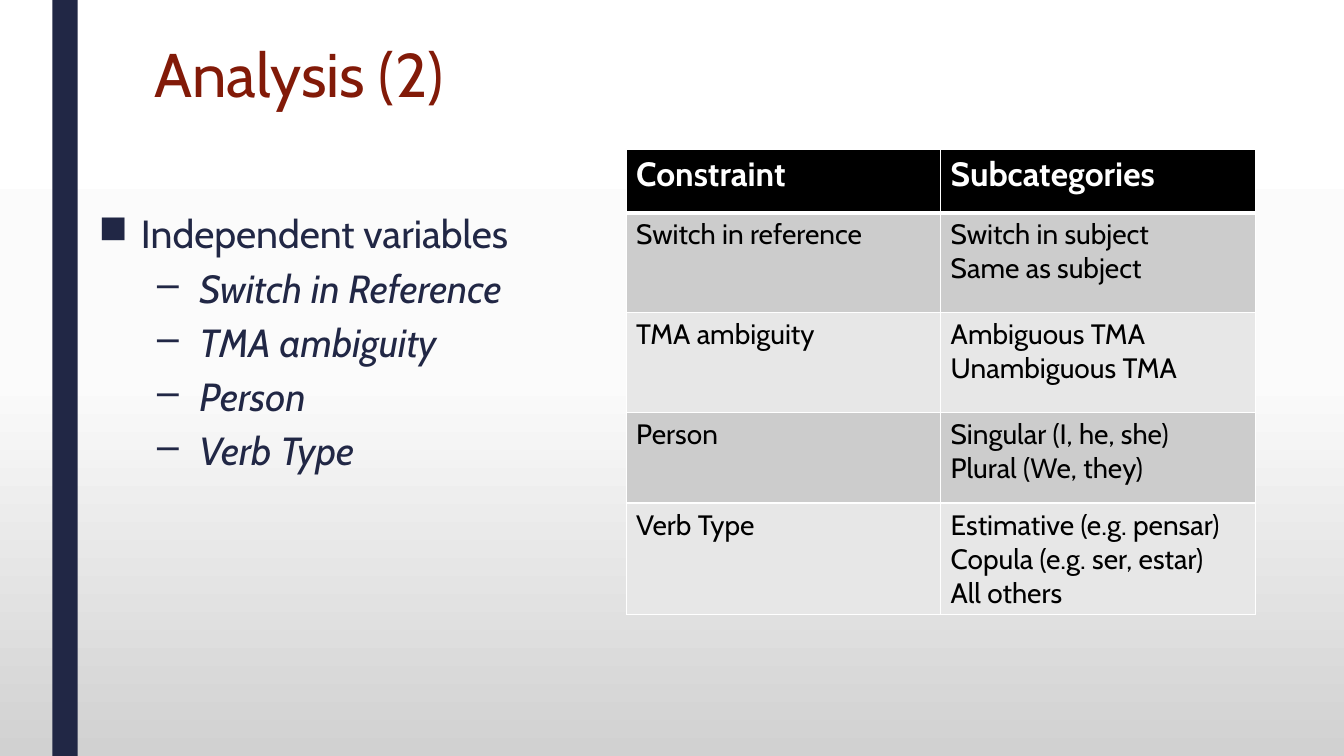
from pptx import Presentation
from pptx.dml.color import RGBColor
from pptx.enum.shapes import MSO_SHAPE
from pptx.oxml.ns import qn
from pptx.util import Inches, Pt
from lxml import etree

RECT = MSO_SHAPE.RECTANGLE
FONT = "Cabin"
COLORS = {"navy": "212745", "red": "821A08", "white": "FFFFFF", "black": "000000",
          "band_dark": "CCCCCC", "band_light": "E7E7E7"}

# Content
BACKGROUND = [(0, "FFFFFF"), (50, "FBFBFB"), (100, "D1D1D1")]
TITLE = "Analysis (2)"
HEADING = "Independent variables"
VARIABLES = ["Switch in Reference", "TMA ambiguity", "Person", "Verb Type"]
TABLE = [
    ("Constraint", ["Subcategories"]),
    ("Switch in reference", ["Switch in subject", "Same as subject"]),
    ("TMA ambiguity", ["Ambiguous TMA", "Unambiguous TMA"]),
    ("Person", ["Singular (I, he, she)", "Plural (We, they)"]),
    ("Verb Type", ["Estimative (e.g. pensar)", "Copula (e.g. ser, estar)", "All others"]),
]
ROW_HEIGHTS = [0.63, 0.99, 0.99, 0.9, 1.11]
COL_WIDTH = 3.12

# Text formats
TITLE_FONT = {"size": Pt(44), "color": "red"}
HEADING_FONT = {"size": Pt(28), "color": "navy"}
VARIABLE_FONT = {**HEADING_FONT, "italic": True}
HEADER_FONT = {"size": Pt(24), "color": "white", "bold": True}
CELL_FONT = {"size": Pt(20), "color": "black", "bold": False}


def rgb(name):
    return RGBColor.from_string(COLORS[name])


def write(p, text, font, **spacing):
    r = p.add_run()
    r.text = text
    r.font.name = FONT
    for key, value in font.items():
        if key == "color":
            r.font.color.rgb = rgb(value)
        else:
            setattr(r.font, key, value)
    for key, value in spacing.items():
        setattr(p, key, value)


def text_frame(s, *box):
    tf = s.shapes.add_textbox(*map(Inches, box)).text_frame
    tf.word_wrap = True
    return tf


def add_bullet(p, char, left):
    pPr = p._p.get_or_add_pPr()
    pPr.set("marL", str(Inches(left)))
    pPr.set("indent", str(Inches(-0.42)))
    etree.SubElement(pPr, qn("a:buChar"), char=char)


def add_border(cell, side, points):
    ln = etree.Element(qn("a:" + side), w=str(Pt(points)))
    fill = etree.SubElement(ln, qn("a:solidFill"))
    etree.SubElement(fill, qn("a:srgbClr"), val=COLORS["white"])
    return ln


def fill_cell(cell, lines, font, color, edges):
    cell.fill.solid()
    cell.fill.fore_color.rgb = rgb(color)
    tcPr = cell._tc.get_or_add_tcPr()
    for i, (side, points) in enumerate(edges.items()):
        tcPr.insert(i, add_border(cell, side, points))
    tf = cell.text_frame
    for i, line in enumerate(lines):
        write(tf.add_paragraph() if i else tf.paragraphs[0], line, font)


prs = Presentation()
prs.slide_width, prs.slide_height = Inches(13.33), Inches(7.5)
s = prs.slides.add_slide(prs.slide_layouts[6])

# Background gradient, top to bottom
bg = s.background.fill
bg.gradient()
bg.gradient_angle = 270
stops = s.element.find(".//" + qn("a:gsLst"))
for gs in list(stops):
    stops.remove(gs)
for percent, color in BACKGROUND:
    gs = etree.SubElement(stops, qn("a:gs"), pos=str(percent * 1000))
    etree.SubElement(gs, qn("a:srgbClr"), val=color)

# Side bar
bar = s.shapes.add_shape(RECT, Inches(0.52), 0, Inches(0.25), prs.slide_height)
bar.shadow.inherit = False
bar.fill.solid()
bar.fill.fore_color.rgb = rgb("navy")
bar.line.fill.background()

# Title
tf = text_frame(s, 1.43, 0.4, 10.99, 0.69)
write(tf.paragraphs[0], TITLE, TITLE_FONT, line_spacing=0.89)

# Bulleted list
tf = text_frame(s, 0.88, 2.07, 4.38, 4.53)
p = tf.paragraphs[0]
write(p, HEADING, HEADING_FONT, line_spacing=0.94, space_before=Pt(10), space_after=Pt(2))
add_bullet(p, "■", 0.42)
for variable in VARIABLES:
    p = tf.add_paragraph()
    write(p, variable, VARIABLE_FONT, level=1, line_spacing=0.94,
          space_before=Pt(5), space_after=Pt(2))
    add_bullet(p, "–", 1)

# Table
table = s.shapes.add_table(len(TABLE), 2, Inches(6.21), Inches(1.48),
                           Inches(2 * COL_WIDTH), Inches(sum(ROW_HEIGHTS))).table
for col in table.columns:
    col.width = Inches(COL_WIDTH)
for i, (constraint, subcategories) in enumerate(TABLE):
    table.rows[i].height = Inches(ROW_HEIGHTS[i])
    font = CELL_FONT if i else HEADER_FONT
    color = ("band_dark" if i % 2 else "band_light") if i else "black"
    edges = {"lnL": 1, "lnR": 1, "lnT": 3 if i == 1 else 1, "lnB": 1 if i else 3}
    for j, lines in enumerate([[constraint], subcategories]):
        fill_cell(table.cell(i, j), lines, font, color, edges)

prs.save("out.pptx")
